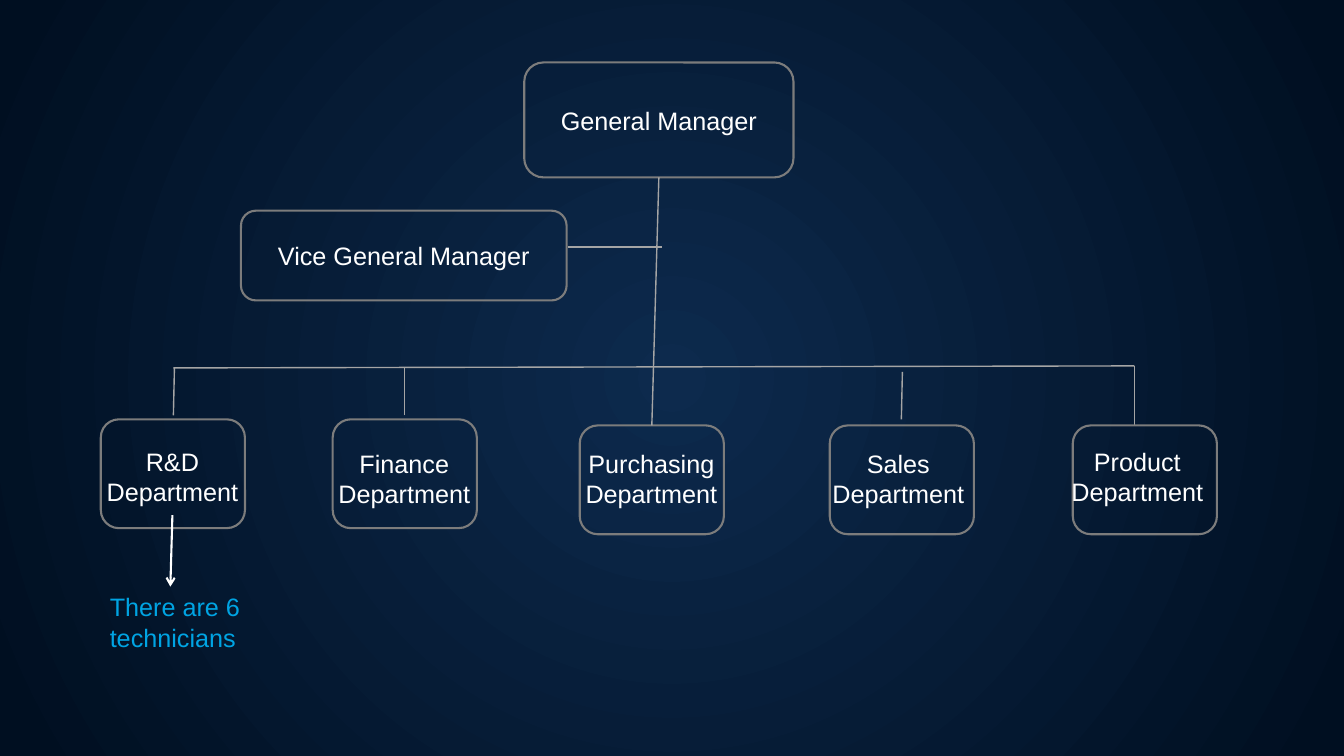
from pptx import Presentation
from pptx.dml.color import RGBColor
from pptx.enum.shapes import MSO_CONNECTOR, MSO_SHAPE
from pptx.enum.text import MSO_ANCHOR, MSO_AUTO_SIZE, PP_ALIGN
from pptx.oxml import parse_xml
from pptx.oxml.ns import nsdecls, qn
from pptx.util import Emu, Pt

PX = 9144  # one px is a hundredth of an inch
WIDE, HIGH = 1333, 750
HUES = {"glow": "0D2A4D", "night": "000F21", "frame": "7C7C7C",
        "link": "A5A5A5", "white": "FFFFFF", "note": "00A4E3"}

# box left, box top, label centre, label top, label width, label lines
UNITS = [
    (100, 416, 171, 438, 242, ["R&D", "Department"]),
    (330, 416, 401, 440, 202, ["Finance", "Department"]),
    (575, 422, 646, 440, 178, ["Purchasing Department"]),
    (823, 422, 891, 440, 184, ["Sales", "Department"]),
    (1064, 422, 1128, 438, 278, ["Product", "Department"]),
]


def px(n):
    return Emu(round(n * PX))


def hue(name):
    return RGBColor.from_string(HUES[name])


def write(frame, lines, size=18, color="white", align=PP_ALIGN.CENTER):
    frame.word_wrap = True
    for i, line in enumerate(lines):
        para = frame.add_paragraph() if i else frame.paragraphs[0]
        para.alignment = align
        run = para.add_run()
        run.text = line
        run.font.size = Pt(size)
        run.font.name = "Arial"
        run.font.color.rgb = hue(color)


def label(slide, box, lines, **style):
    text = slide.shapes.add_textbox(*map(px, box))
    write(text.text_frame, lines, **style)
    text.text_frame.auto_size = MSO_AUTO_SIZE.SHAPE_TO_FIT_TEXT


def frame(slide, box, lines=()):
    shape = slide.shapes.add_shape(MSO_SHAPE.ROUNDED_RECTANGLE, *map(px, box))
    shape.shadow.inherit = False
    shape.fill.background()
    shape.line.color.rgb = hue("frame")
    shape.line.width = Pt(1.5)
    shape.text_frame.vertical_anchor = MSO_ANCHOR.MIDDLE
    write(shape.text_frame, lines)
    return shape


def link(slide, ends, color="link", width=1, arrow=False):
    line = slide.shapes.add_connector(MSO_CONNECTOR.STRAIGHT, *map(px, ends))
    line.line.color.rgb = hue(color)
    line.line.width = Pt(width)
    if arrow:
        tip = parse_xml(f'<a:tailEnd {nsdecls("a")} type="arrow"/>')
        line.line._get_or_add_ln().append(tip)
    line._element.spPr.append(parse_xml(f'<a:effectLst {nsdecls("a")}/>'))
    return line


def paint(slide):
    # Round glow from the centre of the slide
    fill = slide.background.fill
    fill.gradient()
    for stop, name, spot in zip(fill.gradient_stops, ("glow", "night"), (0, 0.97)):
        stop.color.rgb = hue(name)
        stop.position = spot
    grad = slide.element.find(".//" + qn("a:gradFill"))
    for old in grad.findall(qn("a:lin")):
        grad.remove(old)
    grad.find(qn("a:gsLst")).addnext(parse_xml(
        f'<a:path {nsdecls("a")} path="circle"><a:fillToRect l="50000" '
        't="50000" r="50000" b="50000"/></a:path>'))


def heads(slide, x, y, w, h):
    # General manager at the top right, vice manager at the lower left
    chief = frame(slide, (x + w - 267, y, 267, 114), ["General Manager"])
    frame(slide, (x, y + h - 89, 323, 89), ["Vice General Manager"])
    link(slide, (x + 324, y + 183, x + 418, y + 183))
    return chief


def unit(slide, x, y, w, h, mid, top, wide, lines):
    box = frame(slide, (x, y, w, h))
    label(slide, (mid - wide / 2, top, wide, 71), lines)
    return box


def rail(slide, x, y, w, h):
    # Cross line with the drops to the departments
    link(slide, (x, y + 2, x + w, y))
    for foot, head, top, drop in ((0, 1, 2, 47), (229, 229, 2, 47),
                                  (722, 723, 6, 47), (w, w, 0, h)):
        link(slide, (x + foot, y + top + drop, x + head, y + top))


def note(slide, x, y, w, h):
    # Arrow down to the remark on staff
    link(slide, (x + 72, y, x + 70, y + 71), color="white", width=1.5, arrow=True)
    label(slide, (x, y + 71, w, h - 71), ["There are 6 technicians"],
          color="note", align=PP_ALIGN.LEFT)


def main():
    deck = Presentation()
    deck.slide_width, deck.slide_height = px(WIDE), px(HIGH)
    slide = deck.slides.add_slide(deck.slide_layouts[6])
    paint(slide)
    chief = heads(slide, 239, 62, 548, 236)
    rail(slide, 172, 363, 953, 59)
    boxes = [unit(slide, x, y, 143, 108, *rest) for x, y, *rest in UNITS]
    # Trunk from the general manager to the middle department
    trunk = link(slide, (653, 176, 646, 422))
    trunk.begin_connect(chief, 2)
    trunk.end_connect(boxes[2], 0)
    note(slide, 99, 511, 185, 142)
    deck.save("out.pptx")


if __name__ == "__main__":
    main()
